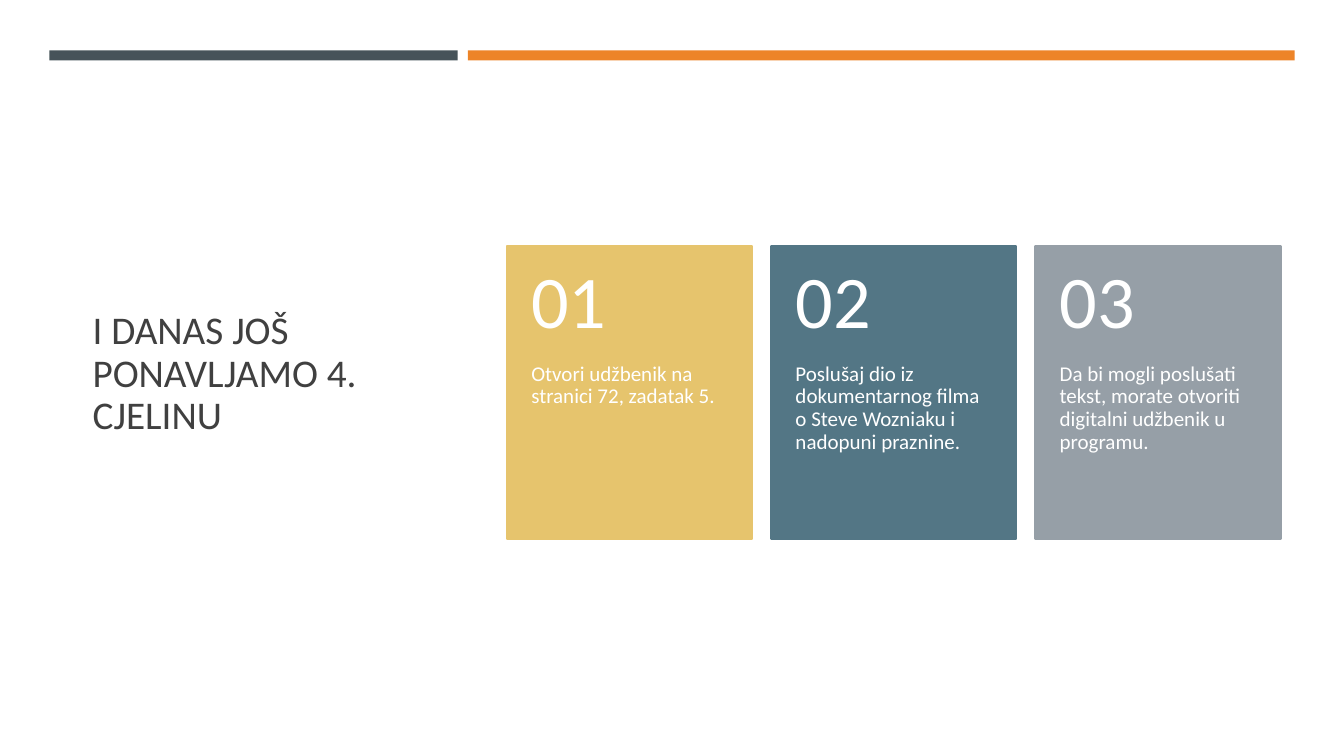
import dataclasses

import pptx
import pptx.dml.color
import pptx.enum.shapes
import pptx.enum.text
import pptx.util

Inches = pptx.util.Inches
Anchor = pptx.enum.text.MSO_ANCHOR


@dataclasses.dataclass(frozen=True)
class Theme:
    font: str = "Calibri"
    white: str = "FFFFFF"
    title_ink: str = "404040"
    slate: str = "465359"
    orange: str = "ED8428"
    gold: str = "E6C46D"
    teal: str = "537685"
    gray: str = "969FA7"
    title_size: int = 28
    number_size: int = 53
    body_size: int = 15
    outline: float = 1.75


theme = Theme()


def add_block(left, top, width, height, color, outlined=False):
    """Add a flat rectangle, with an outline of its own colour if asked."""
    block = page.shapes.add_shape(
        pptx.enum.shapes.MSO_SHAPE.RECTANGLE,
        Inches(left), Inches(top), Inches(width), Inches(height))
    block.shadow.inherit = False
    rgb = pptx.dml.color.RGBColor.from_string(color)
    block.fill.solid()
    block.fill.fore_color.rgb = rgb
    if outlined:
        block.line.color.rgb = rgb
        block.line.width = pptx.util.Pt(theme.outline)
    else:
        block.line.fill.background()


def add_text(text, left, top, width, height, *, size, color,
             anchor=Anchor.MIDDLE, insets=(0.1, 0.05, 0.1, 0.05)):
    """Add a wrapped text box; insets run left, top, right, bottom."""
    box = page.shapes.add_textbox(
        Inches(left), Inches(top), Inches(width), Inches(height))
    frame = box.text_frame
    frame.word_wrap = True
    frame.vertical_anchor = anchor
    (frame.margin_left, frame.margin_top,
     frame.margin_right, frame.margin_bottom) = map(Inches, insets)
    para = frame.paragraphs[0]
    para.line_spacing = 0.9
    span = para.add_run()
    span.text = text
    span.font.name = theme.font
    span.font.size = pptx.util.Pt(size)
    span.font.color.rgb = pptx.dml.color.RGBColor.from_string(color)


deck = pptx.Presentation()
deck.slide_width = Inches(13.33)
deck.slide_height = Inches(7.5)
page = deck.slides.add_slide(deck.slide_layouts[6])
page.background.fill.solid()
page.background.fill.fore_color.rgb = pptx.dml.color.RGBColor.from_string(theme.white)

add_text("I DANAS JOŠ PONAVLJAMO 4. CJELINU", 0.82, 1.14, 3.34, 5.15,
         size=theme.title_size, color=theme.title_ink)

add_block(0.49, 0.5, 4.05, 0.1, theme.slate)
add_block(4.64, 0.5, 8.2, 0.1, theme.orange)

cards = [
    (theme.gold, "Otvori udžbenik na stranici 72, zadatak 5."),
    (theme.teal, "Poslušaj dio iz dokumentarnog filma o Steve Wozniaku "
                 "i nadopuni praznine."),
    (theme.gray, "Da bi mogli poslušati tekst, morate otvoriti digitalni "
                 "udžbenik u programu."),
]
card_left, card_top, card_width, card_pitch = 5.03, 2.44, 2.43, 2.62
number_height, body_height = 1.16, 1.75

for index, (color, body) in enumerate(cards):
    left = card_left + index * card_pitch
    add_block(left, card_top, card_width, number_height + body_height, color,
              outlined=True)
    add_text(body, left, card_top + number_height, card_width, body_height,
             size=theme.body_size, color=theme.white, anchor=Anchor.TOP,
             insets=(0.24, 0, 0.24, 0.36))
    add_text(f"{index + 1:02}", left, card_top, card_width, number_height,
             size=theme.number_size, color=theme.white,
             insets=(0.24, 0.18, 0.24, 0.18))

deck.save("out.pptx")
